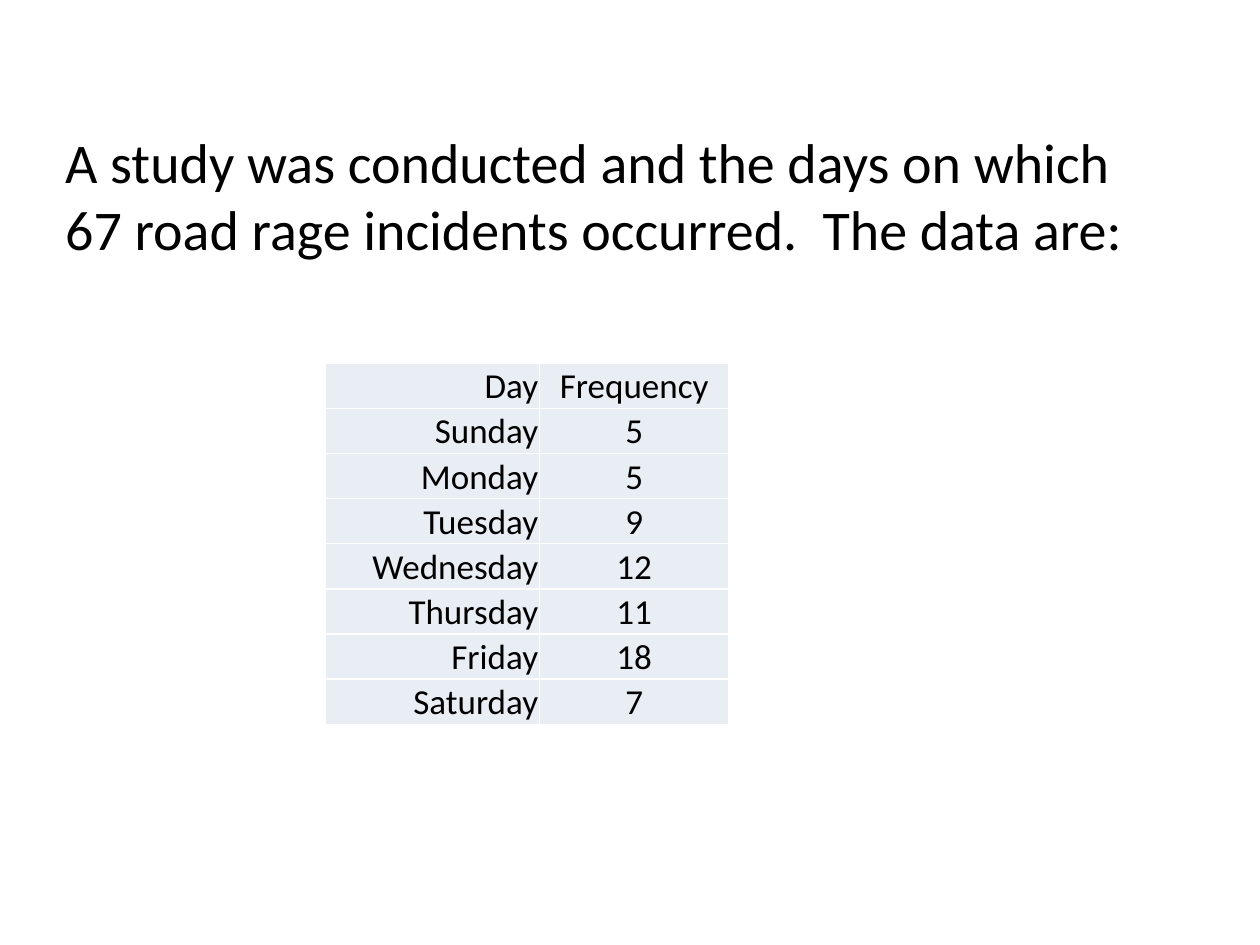
from pptx import Presentation
from pptx.dml.color import RGBColor
from pptx.enum import text
from pptx.util import Cm, Pt

BLACK = RGBColor(0x00, 0x00, 0x00)
PALE = RGBColor(0xE9, 0xED, 0xF4)

HEAD = "A study was conducted and the days on which 67 road rage incidents occurred.  The data are:"
DAYS = [
    ("Day", "Frequency"),
    ("Sunday", 5),
    ("Monday", 5),
    ("Tuesday", 9),
    ("Wednesday", 12),
    ("Thursday", 11),
    ("Friday", 18),
    ("Saturday", 7),
]


class Deck:
    font = "Calibri"

    def __init__(self, wide, high):
        self.prs = Presentation()
        self.prs.slide_width, self.prs.slide_height = wide, high
        self.slide = None

    def add(self):
        """Start a title slide without its subtitle."""
        self.slide = self.prs.slides.add_slide(self.prs.slide_layouts[0])
        sub = self.slide.placeholders[1].element
        sub.getparent().remove(sub)

    def style(self, para, size, align):
        para.alignment = align
        para.font.name = self.font
        para.font.size = Pt(size)
        para.font.color.rgb = BLACK

    def title(self, words, left, top, wide, high):
        box = self.slide.shapes.title
        box.left, box.top, box.width, box.height = left, top, wide, high
        frame = box.text_frame
        frame.text = words
        frame.auto_size = text.MSO_AUTO_SIZE.NONE
        frame.vertical_anchor = text.MSO_ANCHOR.MIDDLE
        self.style(frame.paragraphs[0], 32, text.PP_ALIGN.LEFT)

    def table(self, rows, left, top, cols, high, aligns):
        """Draw rows of equal height; cols holds the column widths."""
        grid = self.slide.shapes.add_table(
            len(rows), len(cols), left, top, sum(cols), high * len(rows)
        ).table
        grid.first_row = grid.horz_banding = False
        for col, wide in zip(grid.columns, cols):
            col.width = wide
        for line, row in zip(grid.rows, rows):
            line.height = high
            for cell, value, align in zip(line.cells, row, aligns):
                self.cell(cell, value, align)

    def cell(self, cell, value, align):
        cell.text = str(value)
        cell.fill.solid()
        cell.fill.fore_color.rgb = PALE
        cell.vertical_anchor = text.MSO_ANCHOR.BOTTOM
        cell.margin_left = cell.margin_right = cell.margin_top = Cm(0.03)
        cell.margin_bottom = 0
        self.style(cell.text_frame.paragraphs[0], 20, align)


def main():
    deck = Deck(Cm(25.4), Cm(19.05))
    deck.add()
    deck.title(HEAD, Cm(1.06), Cm(1.06), Cm(22.86), Cm(5.72))
    deck.table(
        DAYS, Cm(6.56), Cm(7.32), [Cm(4.32), Cm(3.81)], Cm(0.91),
        [text.PP_ALIGN.RIGHT, text.PP_ALIGN.CENTER],
    )
    deck.prs.save("out.pptx")


if __name__ == "__main__":
    main()
